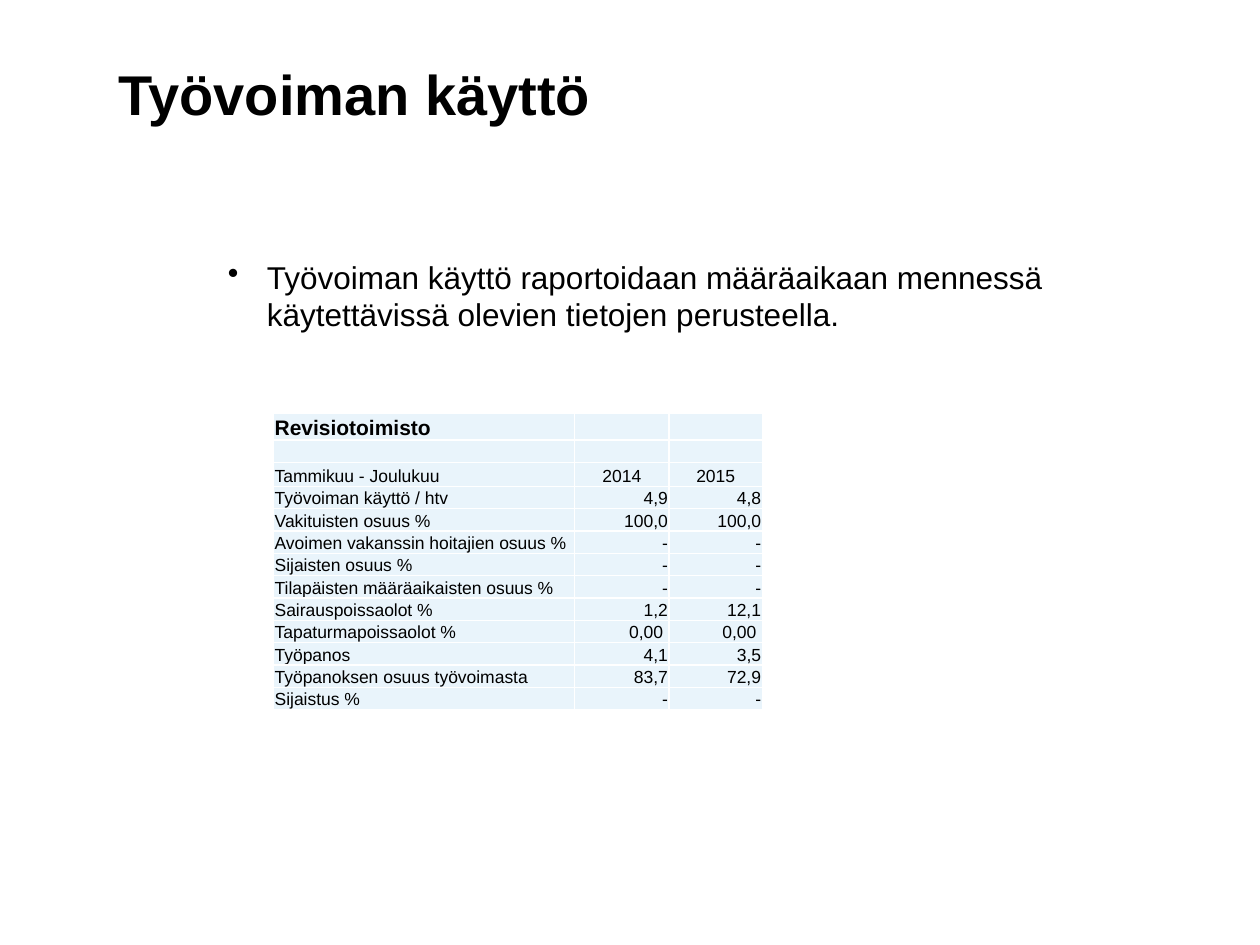
from lxml.etree import SubElement
from pptx import Presentation
from pptx.dml.color import RGBColor
from pptx.enum.text import MSO_ANCHOR, PP_ALIGN
from pptx.oxml.ns import qn
from pptx.util import Inches, Pt

FONT = "Arial"
HEX = {"ink": "000000", "cell": "E9F4FB", "rule": "FFFFFF"}
COLS = [2.39, 0.75, 0.74]
HEAD = [0.19, 0.18, 0.19]
TALL = 2.32
ROWS = [
    ("Revisiotoimisto", "", ""),
    ("", "", ""),
    ("Tammikuu - Joulukuu", "2014", "2015"),
    ("Työvoiman käyttö / htv", "4,9", "4,8"),
    ("Vakituisten osuus %", "100,0", "100,0"),
    ("Avoimen vakanssin hoitajien osuus %", "-", "-"),
    ("Sijaisten osuus %", "-", "-"),
    ("Tilapäisten määräaikaisten osuus %", "-", "-"),
    ("Sairauspoissaolot %", "1,2", "12,1"),
    ("Tapaturmapoissaolot %", "0,00 ", "0,00 "),
    ("Työpanos", "4,1", "3,5"),
    ("Työpanoksen osuus työvoimasta", "83,7", "72,9"),
    ("Sijaistus %", "-", "-"),
]


def add_run(para, text, size, bold=False):
    run = para.add_run()
    run.text = text
    font = run.font
    font.name, font.size, font.bold = FONT, Pt(size), bold
    font.color.rgb = RGBColor.from_string(HEX["ink"])


def add_box(slide, left, top, width, height):
    box = slide.shapes.add_textbox(*map(Inches, (left, top, width, height)))
    frame = box.text_frame
    frame.word_wrap = True
    return frame


def add_title(slide, text):
    frame = add_box(slide, 0.94, 0.55, 8.11, 1.09)
    frame.margin_left = frame.margin_top = frame.margin_bottom = 0
    para = frame.paragraphs[0]
    para.line_spacing = Pt(33)
    add_run(para, text, 32, True)


def add_bullet(slide, text):
    para = add_box(slide, 1.71, 2.01, 7.36, 4.44).paragraphs[0]
    para.line_spacing, para.space_after = Pt(21), Pt(12)
    props = para._p.get_or_add_pPr()
    props.set("marL", str(Inches(0.31)))
    props.set("indent", str(-Inches(0.31)))
    SubElement(props, qn("a:buChar"), char="•")
    add_run(para, text, 18)


def style_cell(cell):
    cell.margin_left = cell.margin_top = cell.margin_right = Inches(0.01)
    cell.margin_bottom = 0
    cell.vertical_anchor = MSO_ANCHOR.BOTTOM
    props = cell._tc.get_or_add_tcPr()
    for side in ("lnL", "lnR", "lnT", "lnB"):
        line = SubElement(props, qn(f"a:{side}"), w=str(Pt(1)))
        fill = SubElement(line, qn("a:solidFill"))
        SubElement(fill, qn("a:srgbClr"), val=HEX["rule"])
    cell.fill.solid()
    cell.fill.fore_color.rgb = RGBColor.from_string(HEX["cell"])


def fill_cell(cell, text, row, col):
    para = cell.text_frame.paragraphs[0]
    if col:
        para.alignment = PP_ALIGN.CENTER if row == 2 else PP_ALIGN.RIGHT
    if text:
        add_run(para, text, 10 if row else 12, row == 0)
    else:
        # Small end mark keeps an empty row low
        SubElement(para._p, qn("a:endParaRPr"), sz="1000")


def add_grid(slide):
    size = map(Inches, (2.17, 3.28, sum(COLS), TALL))
    table = slide.shapes.add_table(len(ROWS), len(COLS), *size).table
    table.first_row = table.horz_banding = False
    for col, width in zip(table.columns, COLS):
        col.width = Inches(width)
    rest = len(ROWS) - len(HEAD)
    highs = HEAD + [(TALL - sum(HEAD)) / rest] * rest
    for r, (high, texts) in enumerate(zip(highs, ROWS)):
        table.rows[r].height = Inches(high)
        for c, text in enumerate(texts):
            cell = table.cell(r, c)
            style_cell(cell)
            fill_cell(cell, text, r, c)


def main():
    deck = Presentation()
    deck.slide_width, deck.slide_height = Inches(10), Inches(7.5)
    slide = deck.slides.add_slide(deck.slide_layouts[6])
    add_bullet(slide, "Työvoiman käyttö raportoidaan määräaikaan mennessä "
                      "käytettävissä olevien tietojen perusteella.")
    add_title(slide, "Työvoiman käyttö")
    add_grid(slide)
    deck.save("out.pptx")


if __name__ == "__main__":
    main()
